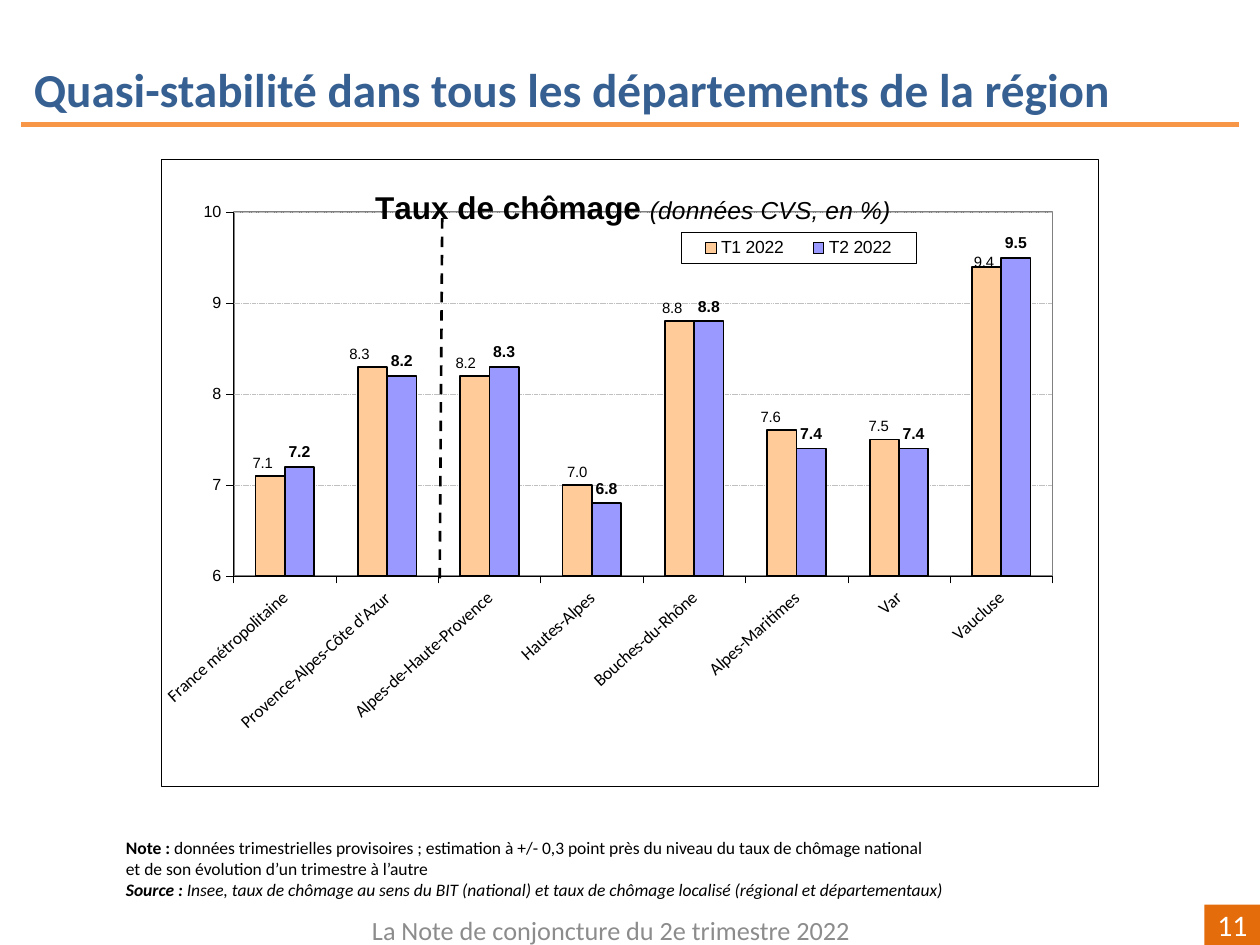
from lxml.etree import SubElement
from pptx import Presentation
from pptx.chart.data import CategoryChartData as ChartData
from pptx.dml.color import RGBColor as Rgb
from pptx.enum.chart import XL_CHART_TYPE as ChartType, XL_LABEL_POSITION as LabelPos
from pptx.enum.chart import XL_LEGEND_POSITION as LegendPos, XL_TICK_MARK as Tick
from pptx.enum.dml import MSO_LINE as Dash
from pptx.enum.shapes import MSO_CONNECTOR as Connector, MSO_SHAPE as Shape
from pptx.enum.text import MSO_ANCHOR as Anchor, PP_ALIGN as Align
from pptx.oxml import parse_xml
from pptx.oxml.ns import nsdecls, qn
from pptx.util import Inches, Pt

COLORS = {
    "title": "376092", "rule": "F79646", "badge": "E46C0A", "footer": "8C8C8C",
    "black": "000000", "white": "FFFFFF", "grid": "C0C0C0", "frame": "808080",
    "first": "FFCC99", "second": "9999FF", "highlight": "FFFF00",
}
COLUMNS, ROWS = 100, 75
WIDTH, HEIGHT = Inches(10), Inches(7.5)
RATES = {
    "France métropolitaine": (7.1, 7.2),
    "Provence-Alpes-Côte d'Azur": (8.3, 8.2),
    "Alpes-de-Haute-Provence": (8.2, 8.3),
    "Hautes-Alpes": (7.0, 6.8),
    "Bouches-du-Rhône": (8.8, 8.8),
    "Alpes-Maritimes": (7.6, 7.4),
    "Var": (7.5, 7.4),
    "Vaucluse": (9.4, 9.5),
}
LABEL_SHIFTS = {0: (-0.8, 0), 1: (-1.4, 0), 2: (-1, 0), 4: (-0.8, 0),
                5: (-1.2, 0), 6: (-0.6, 0), 7: (-0.3, 1.3)}
NOTE = [
    [("Note : ", {"bold": True}),
     ("données trimestrielles provisoires ; estimation à +/- 0,3 point près du niveau "
      "du taux de chômage national", {})],
    [("et de son évolution d’un trimestre à l’autre", {})],
    [("Source : ", {"bold": True, "italic": True}),
     ("Insee, taux de chômage au sens du BIT (national) et taux de chômage localisé "
      "(régional et départementaux)", {"italic": True})],
]


def grid(col, row, *size):
    """Turn grid columns and rows into slide lengths."""
    steps = (WIDTH / COLUMNS, HEIGHT / ROWS) * 2
    return [int(value * step) for value, step in zip((col, row, *size), steps)]


def color(name):
    """Look up a named colour."""
    return Rgb.from_string(COLORS[name])


def set_all(target, values):
    """Set attributes from a dict of format values."""
    for name, value in values.items():
        setattr(target, name, value)


def set_font(font, size, tint="black", name="Arial", **values):
    """Format a font."""
    set_all(font, {"size": Pt(size), "name": name, "bold": False, **values})
    font.color.rgb = color(tint)


def set_line(line, tint, width, dash=None):
    """Format an outline."""
    line.color.rgb = color(tint)
    set_all(line, {"width": Pt(width), "dash_style": dash})


def write(box, paragraphs, size, tint, align=Align.LEFT, **frame_values):
    """Fill a shape with paragraphs of formatted spans."""
    frame = box.text_frame
    set_all(frame, {"word_wrap": True, **frame_values})
    for index, spans in enumerate(paragraphs):
        para = frame.paragraphs[0] if index == 0 else frame.add_paragraph()
        para.alignment = align
        for text, values in spans:
            span = para.add_run()
            span.text = text
            set_font(span.font, size, tint, "Calibri", **values)


def add_text(page, place, paragraphs, size, tint, **values):
    """Add a text box."""
    write(page.shapes.add_textbox(*grid(*place)), paragraphs, size, tint, **values)


def add_rule(page, start, end, tint, width, dash=None):
    """Add a straight line without shadow."""
    rule = page.shapes.add_connector(Connector.STRAIGHT, *grid(*start), *grid(*end))
    set_line(rule.line, tint, width, dash)
    SubElement(rule._element.spPr, qn("a:effectLst"))


def add_badge(page, place, number):
    """Add the page number block."""
    badge = page.shapes.add_shape(Shape.RECTANGLE, *grid(*place))
    badge.shadow.inherit = False
    badge.fill.solid()
    badge.fill.fore_color.rgb = color("badge")
    badge.line.fill.background()
    write(badge, [[(number, {})]], 17, "white", Align.RIGHT, vertical_anchor=Anchor.MIDDLE)


def area_format(fill, line=None, width=0.25):
    """Build chart area properties with a fill and an optional border."""
    border = (f'<a:ln w="{Pt(width)}"><a:solidFill><a:srgbClr val="{COLORS[line]}"/>'
              '</a:solidFill></a:ln>') if line else ""
    return parse_xml(f'<c:spPr {nsdecls("c", "a")}><a:solidFill><a:srgbClr '
                     f'val="{COLORS[fill]}"/></a:solidFill>{border}</c:spPr>')


def set_layout(parent, before, percents, inner=False, edge=True):
    """Place a chart part, in percent of the chart, after a given child."""
    for old in parent.findall(qn("c:layout")):
        parent.remove(old)
    tags = ['<c:layoutTarget val="inner"/>'] if inner else []
    if edge:
        tags += ['<c:xMode val="edge"/><c:yMode val="edge"/>']
    tags += [f'<c:{key} val="{value / 100}"/>' for key, value in zip("xywh", percents)]
    layout = parse_xml(f'<c:layout {nsdecls("c")}><c:manualLayout>{"".join(tags)}'
                       '</c:manualLayout></c:layout>')
    if before:
        parent.find(qn(before)).addnext(layout)
    else:
        parent.insert(0, layout)


def point_label(series, index, **font_values):
    """Give one column its own label and return the label element."""
    label = series.points[index].data_label
    set_font(label.font, **font_values)
    label.position = LabelPos.OUTSIDE_END
    element = series._element.xpath(f"c:dLbls/c:dLbl[c:idx/@val='{index}']")[0]
    element.find(qn("c:idx")).addnext(parse_xml(
        f'<c:numFmt {nsdecls("c")} formatCode="0.0" sourceLinked="0"/>'))
    return element


def style_series(series, tint, **font_values):
    """Format the columns and labels of a series."""
    series.format.fill.solid()
    series.format.fill.fore_color.rgb = color(tint)
    set_line(series.format.line, "black", 1)
    labels = series.data_labels
    set_all(labels, {"show_value": True, "number_format": "0.0",
                     "number_format_is_linked": False, "position": LabelPos.OUTSIDE_END})
    set_font(labels.font, **font_values)


def style_axes(chart):
    """Format both axes and the gridlines."""
    rates, places = chart.value_axis, chart.category_axis
    set_all(rates, {"minimum_scale": 6, "maximum_scale": 10, "major_unit": 1})
    set_all(rates.tick_labels, {"number_format": "0", "number_format_is_linked": False})
    set_line(rates.major_gridlines.format.line, "grid", 0.25, Dash.SQUARE_DOT)
    for axis, size, name in ((rates, 9.2, "Arial"), (places, 10, "Calibri")):
        set_all(axis, {"major_tick_mark": Tick.OUTSIDE, "minor_tick_mark": Tick.NONE})
        set_line(axis.format.line, "black", 0.25)
        set_font(axis.tick_labels.font, size, name=name)
    places._element.find(qn("c:txPr")).find(qn("a:bodyPr")).set("rot", str(-42 * 60000))


def style_heading(chart):
    """Write and place the chart title and the legend."""
    heading = chart.chart_title
    para = heading.text_frame.paragraphs[0]
    for text, size, values in (("Taux de chômage ", 18, {"bold": True}),
                               ("(données CVS, en %)", 14, {"italic": True})):
        span = para.add_run()
        span.text = text
        set_font(span.font, size, **values)
    heading.include_in_layout = True
    set_layout(heading._element, "c:tx", (22.4, 4))
    for overlay in heading._element.findall(qn("c:overlay")):
        overlay.set("val", "1")
    chart.has_legend = True
    legend = chart.legend
    set_all(legend, {"position": LegendPos.RIGHT, "include_in_layout": True})
    set_font(legend.font, 10)
    set_layout(legend._element, "c:legendPos", (55.5, 11.7, 25, 5))
    legend._element.find(qn("c:txPr")).addprevious(area_format("white", "black"))


def add_rates_chart(page, place):
    """Add the clustered columns of unemployment rates."""
    data = ChartData(number_format="0.0")
    data.categories = list(RATES)
    for name, values in zip(("T1 2022", "T2 2022"), zip(*RATES.values())):
        data.add_series(name, values)
    chart = page.shapes.add_chart(ChartType.COLUMN_CLUSTERED, *grid(*place), data).chart
    set_font(chart.font, 8.5)
    plot = chart.plots[0]
    set_all(plot, {"gap_width": 150, "overlap": 0, "vary_by_categories": False})
    first, second = plot.series
    style_series(first, "first", size=8.5)
    style_series(second, "second", size=9, bold=True)
    for index, shift in LABEL_SHIFTS.items():
        set_layout(point_label(first, index, size=8.5), "c:idx", shift, edge=False)
    for index in range(2):
        label = point_label(second, index, size=9, bold=True)
        label.find(qn("c:numFmt")).addnext(area_format("highlight"))
    style_axes(chart)
    style_heading(chart)
    space = chart._chartSpace
    space.find(qn("c:chart")).addnext(area_format("white", "black"))
    area = space.xpath("c:chart/c:plotArea")[0]
    set_layout(area, None, (7.7, 8.5, 87.4, 58), inner=True)
    area.append(area_format("white", "frame", 1))


def main():
    """Build the slide and save it."""
    deck = Presentation()
    set_all(deck, {"slide_width": WIDTH, "slide_height": HEIGHT})
    page = deck.slides.add_slide(deck.slide_layouts[6])
    title = "Quasi-stabilité dans tous les départements de la région"
    add_text(page, (1.7, 4.3, 98.3, 5.6), [[(title, {"bold": True})]], 27, "title")
    add_rule(page, (1.7, 9.9), (98.3, 9.9), "rule", 3)
    add_badge(page, (95.6, 71.8, 4.4, 3.2), "11")
    footer = "La Note de conjoncture du 2e trimestre 2022"
    add_text(page, (24.1, 71.8, 48.8, 4), [[(footer, {})]], 15, "footer",
             align=Align.CENTER, vertical_anchor=Anchor.MIDDLE)
    add_text(page, (9.8, 66.1, 68.3, 5.3), NOTE, 10, "black", margin_left=Inches(0.02),
             margin_top=Inches(0.03), margin_right=0, margin_bottom=0)
    add_rates_chart(page, (12.8, 12.6, 74.4, 49.8))
    add_rule(page, (34.9, 45.9), (35.1, 17), "black", 1.5, Dash.DASH)
    deck.save("out.pptx")


if __name__ == "__main__":
    main()
